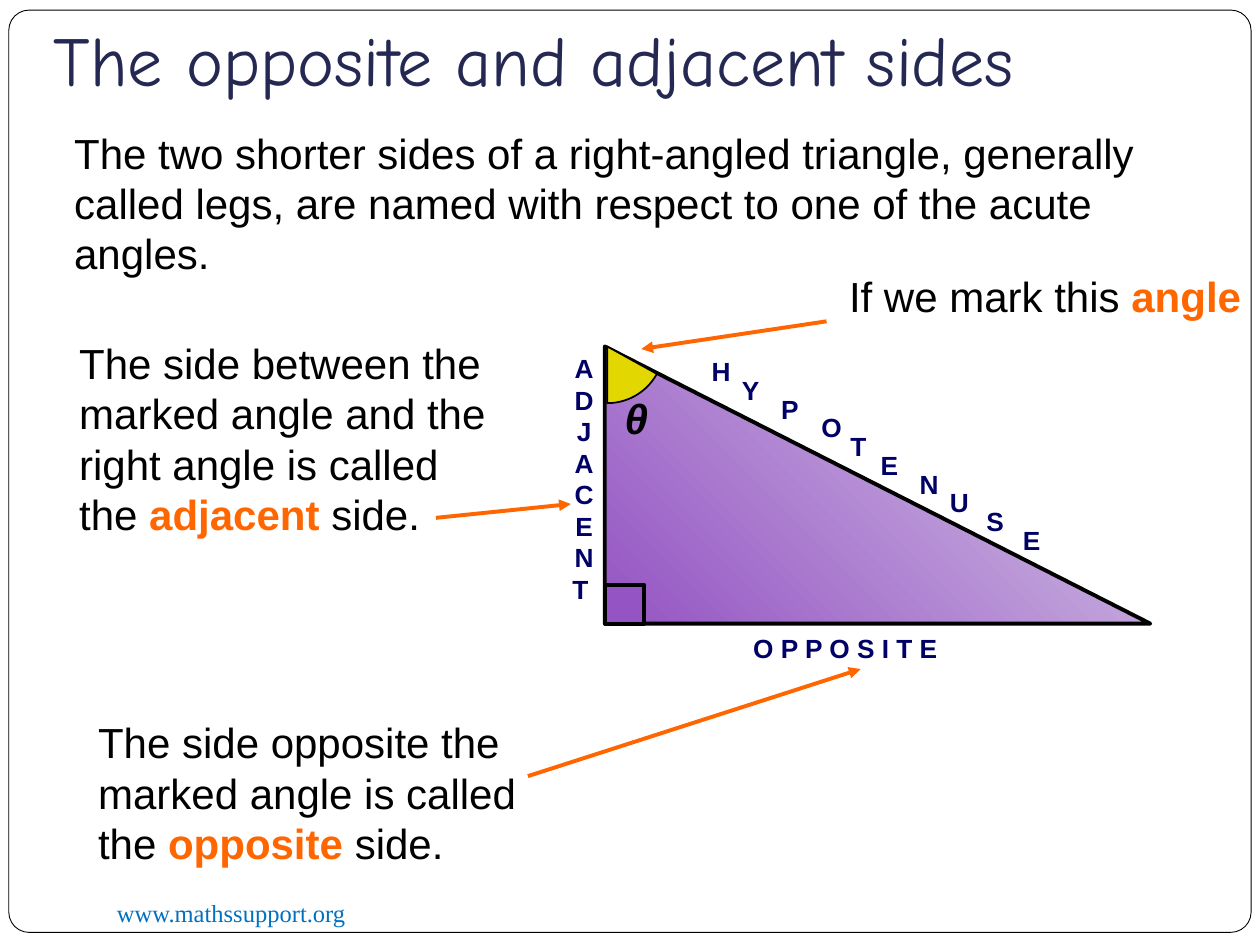
"""Build a slide naming the opposite and adjacent sides of a right-angled triangle."""
from lxml import etree
from pptx import Presentation
from pptx.dml.color import RGBColor
from pptx.enum.shapes import MSO_CONNECTOR, MSO_SHAPE
from pptx.enum.text import MSO_ANCHOR, PP_ALIGN
from pptx.oxml.ns import qn
from pptx.util import Inches, Pt

STRAIGHT = MSO_CONNECTOR.STRAIGHT
ROUNDED = MSO_SHAPE.ROUNDED_RECTANGLE
RECTANGLE = MSO_SHAPE.RECTANGLE
TRIANGLE = MSO_SHAPE.RIGHT_TRIANGLE
PIE = MSO_SHAPE.PIE
BOTTOM = MSO_ANCHOR.BOTTOM
LEFT = PP_ALIGN.LEFT
CENTER = PP_ALIGN.CENTER

WHITE = RGBColor(0xFF, 0xFF, 0xFF)
BLACK = RGBColor(0x00, 0x00, 0x00)
NAVY = RGBColor(0x01, 0x00, 0x66)
TITLE_BLUE = RGBColor(0x24, 0x28, 0x52)
LINK_BLUE = RGBColor(0x00, 0x70, 0xC0)
ORANGE = RGBColor(0xFF, 0x66, 0x00)
PURPLE = RGBColor(0x94, 0x54, 0xC3)
LILAC = RGBColor(0xD8, 0xCB, 0xE7)
YELLOW = RGBColor(0xE2, 0xD7, 0x00)

deck = Presentation()
deck.slide_width, deck.slide_height = Inches(10), Inches(7.5)
page = deck.slides.add_slide(deck.slide_layouts[6])


def add_text(place, lines, size, color, name="Arial", bold=False, wrap=True, align=LEFT):
    box = page.shapes.add_textbox(*map(Inches, place))
    frame = box.text_frame
    frame.word_wrap = wrap
    for index, line in enumerate(lines):
        para = frame.add_paragraph() if index else frame.paragraphs[0]
        para.alignment = align
        para.font.name = name
        para.font.size = Pt(size)
        para.font.bold = bold
        para.font.color.rgb = color
        for position, piece in enumerate(line.split("*")):
            span = para.add_run()
            span.text = piece
            if position % 2:
                span.font.bold = True
                span.font.color.rgb = ORANGE
    return frame


def add_figure(kind, place, fill, width, adjustments=()):
    figure = page.shapes.add_shape(kind, *map(Inches, place))
    figure.shadow.inherit = False
    figure.fill.solid()
    figure.fill.fore_color.rgb = fill
    figure.line.color.rgb = BLACK
    figure.line.width = Pt(width)
    for index, value in enumerate(adjustments):
        figure.adjustments[index] = value
    return figure


add_figure(ROUNDED, (0.07, 0.08, 9.86, 7.32), WHITE, 0.5, [0.022])
add_text((0.83, 7.08, 3.25, 0.34), ["www.mathssupport.org"], 14, LINK_BLUE, "Times New Roman")
title = add_text((0.33, 0.14, 9.37, 0.76), ["The opposite and adjacent sides"],
                 40, TITLE_BLUE, "Comic Neue")
title.vertical_anchor = BOTTOM
title.margin_bottom = Inches(0.1)

triangle = add_figure(TRIANGLE, (4.8, 2.75, 4.33, 2.2), PURPLE, 2.25)
triangle.fill.gradient()
triangle.fill.gradient_angle = 45
for stop, color, offset in zip(triangle.fill.gradient_stops, (PURPLE, LILAC), (0, 1)):
    stop.color.rgb = color
    stop.position = offset
add_figure(RECTANGLE, (4.8, 4.64, 0.31, 0.31), PURPLE, 2.25)
add_figure(PIE, (4.37, 2.3, 0.9, 0.9), YELLOW, 1, [17.37, 54.05])

explanations = [
    ((0.49, 0.96, 9.18, 1.31), "The two shorter sides of a right-angled triangle, generally "
     "called legs, are named with respect to one of the acute angles."),
    ((6.64, 2.1, 3.36, 0.5), "If we mark this *angle*"),
    ((0.53, 2.63, 3.58, 1.72), "The side between the marked angle and the right angle "
     "is called the *adjacent* side."),
    ((0.68, 5.64, 3.69, 1.31), "The side opposite the marked angle is called "
     "the *opposite* side."),
]
for place, wording in explanations:
    add_text(place, [wording.removesuffix("*") if wording.count("*") % 2 else wording],
             24, BLACK)

theta = add_text((4.86, 3.07, 0.38, 0.5), ["θ"], 24, BLACK, bold=True, wrap=False)
theta.paragraphs[0].font.italic = True

letter_lefts = [5.55, 5.79, 6.1, 6.42, 6.65, 6.89, 7.2, 7.44, 7.73, 8.02]
for index, (letter, left) in enumerate(zip("HYPOTENUSE", letter_lefts)):
    add_text((left, 2.77 + 0.149 * index, 0.35, 0.35), [letter], 15, NAVY,
             bold=True, wrap=False)
add_text((4.44, 2.75, 0.39, 2.12), [*"ADJACEN", "T "], 15, NAVY,
         bold=True, wrap=False, align=CENTER)
add_text((5.88, 4.97, 1.67, 0.35), ["O P P O S I T E"], 15, NAVY, bold=True, wrap=False)

arrows = [(4.19, 6.16, 6.83, 5.31), (6.56, 2.55, 5.09, 2.77), (3.46, 4.11, 4.53, 4)]
for ends in arrows:
    arrow = page.shapes.add_connector(STRAIGHT, *map(Inches, ends))
    arrow.line.color.rgb = ORANGE
    arrow.line.width = Pt(2.25)
    etree.SubElement(arrow.line._get_or_add_ln(), qn("a:tailEnd"), type="triangle")
    etree.SubElement(arrow._element.spPr, qn("a:effectLst"))

deck.save("out.pptx")
